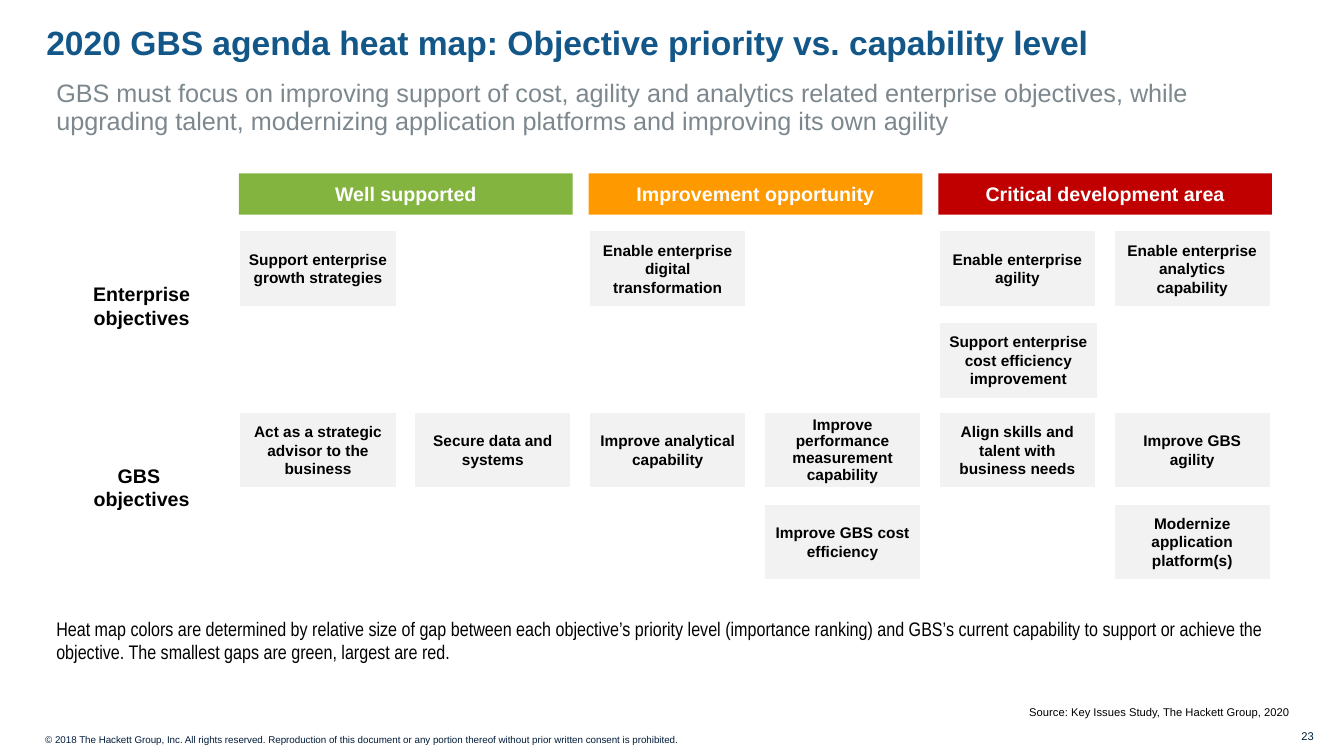
from dataclasses import dataclass
from pptx import Presentation
from pptx.dml.color import RGBColor
from pptx.enum.shapes import MSO_SHAPE
from pptx.enum.text import MSO_ANCHOR, PP_ALIGN
from pptx.util import Inches, Pt


@dataclass(frozen=True)
class Theme:
    font: str = "Arial"
    narrow: str = "Arial Narrow"
    blue: str = "135789"
    navy: str = "001C3A"
    gray: str = "7C878E"
    black: str = "000000"
    white: str = "FFFFFF"
    pale: str = "F2F2F2"
    green: str = "84B440"
    amber: str = "FF9900"
    red: str = "C00000"
    title: int = 24
    lead: int = 18
    head: int = 14
    card: int = 11
    note: int = 8
    legal: int = 7


class Deck:
    def __init__(self, theme):
        self.theme = theme
        self.show = Presentation()
        self.show.slide_width = Inches(13.33)
        self.show.slide_height = Inches(7.5)
        self.slide = self.show.slides.add_slide(self.show.slide_layouts[6])

    def letter(self, shape, text, size, color, bold=False, font=None,
               align=PP_ALIGN.LEFT, space=None, anchor=MSO_ANCHOR.TOP, inset=(0.1, 0.05)):
        frame = shape.text_frame
        side, edge = map(Inches, inset)
        form = {"word_wrap": True, "vertical_anchor": anchor, "margin_left": side,
                "margin_right": side, "margin_top": edge, "margin_bottom": edge}
        for name, value in form.items():
            setattr(frame, name, value)
        frame.text = text
        form = {"name": font or self.theme.font, "size": Pt(size), "bold": bold}
        for para in frame.paragraphs:
            para.alignment = align
            para.line_spacing = space
            for run in para.runs:
                for name, value in form.items():
                    setattr(run.font, name, value)
                run.font.color.rgb = RGBColor.from_string(color)

    def label(self, place, text, size, color, **style):
        box = self.slide.shapes.add_textbox(*map(Inches, place))
        self.letter(box, text, size, color, **style)

    def block(self, place, fill, text, size, color, line=None, **style):
        box = self.slide.shapes.add_shape(MSO_SHAPE.RECTANGLE, *map(Inches, place))
        box.shadow.inherit = False
        box.fill.solid()
        box.fill.fore_color.rgb = RGBColor.from_string(fill)
        if line:
            box.line.color.rgb = RGBColor.from_string(line)
            box.line.width = Pt(2.25)
        else:
            box.line.fill.background()
        self.letter(box, text, size, color, bold=True, align=PP_ALIGN.CENTER,
                    anchor=MSO_ANCHOR.MIDDLE, **style)


LEFT, TOP = 2.37, 2.28
STEP = (11.04 - LEFT) / 5
ROW, BAND = 0.91, 1.8

HEADS = [
    ("Well supported", "green"),
    ("Improvement opportunity", "amber"),
    ("Critical development area", "red"),
]
BANDS = [
    ("Enterprise\nobjectives", [
        (0, 0, "Support enterprise growth strategies"),
        (2, 0, "Enable enterprise digital transformation"),
        (4, 0, "Enable enterprise agility"),
        (5, 0, "Enable enterprise analytics capability"),
        (4, 1, "Support enterprise cost efficiency improvement"),
    ]),
    ("GBS \nobjectives", [
        (0, 0, "Act as a strategic advisor to the business"),
        (1, 0, "Secure data and systems"),
        (2, 0, "Improve analytical capability"),
        (3, 0, "Improve performance measurement capability"),
        (4, 0, "Align skills and talent with business needs"),
        (5, 0, "Improve GBS agility"),
        (3, 1, "Improve GBS cost efficiency"),
        (5, 1, "Modernize application platform(s)"),
    ]),
]


def main():
    theme = Theme()
    deck = Deck(theme)
    deck.label((0.46, 0.26, 12.43, 0.45),
               "2020 GBS agenda heat map: Objective priority vs. capability level",
               theme.title, theme.blue, bold=True, space=0.9, inset=(0, 0))
    deck.label((0.46, 0.74, 12.42, 0.46),
               "GBS must focus on improving support of cost, agility and analytics related "
               "enterprise objectives, while upgrading talent, modernizing application "
               "platforms and improving its own agility",
               theme.lead, theme.gray, space=Pt(20))
    for col, (text, tone) in enumerate(HEADS):
        deck.block((LEFT + 2 * col * STEP, 1.72, 3.31, 0.41), getattr(theme, tone),
                   text, theme.head, theme.white)
    for band, (name, cards) in enumerate(BANDS):
        top = TOP + band * BAND
        deck.label((0.53, top + 0.47, 1.75, 0.57), name, theme.head, theme.black,
                   bold=True, align=PP_ALIGN.CENTER)
        for col, row, text in cards:
            tight = Pt(12) if "measurement" in text else None
            wide = 1.59 if "cost efficiency improvement" in text else 1.57
            deck.block((LEFT + col * STEP, top + row * ROW, wide, 0.77), theme.pale,
                       text, theme.card, theme.black, line=theme.white,
                       space=tight, inset=(0.09, 0.05))
    deck.label((0.46, 6.07, 12.41, 0.57),
               "Heat map colors are determined by relative size of gap between each "
               "objective’s priority level (importance ranking) and GBS’s current capability "
               "to support or achieve the objective. The smallest gaps are green, largest are red.",
               theme.head, theme.black, font=theme.narrow)
    deck.label((6.81, 6.95, 6.08, 0.19), "Source: Key Issues Study, The Hackett Group, 2020",
               theme.note, theme.black, align=PP_ALIGN.RIGHT)
    deck.label((0.35, 7.23, 10.03, 0.22),
               "© 2018 The Hackett Group, Inc. All rights reserved. Reproduction of this document "
               "or any portion thereof without prior written consent is prohibited.",
               theme.legal, theme.navy)
    deck.label((8.59, 7.19, 4.54, 0.24), "23", theme.note, theme.navy, align=PP_ALIGN.RIGHT)
    deck.show.save("out.pptx")


if __name__ == "__main__":
    main()
